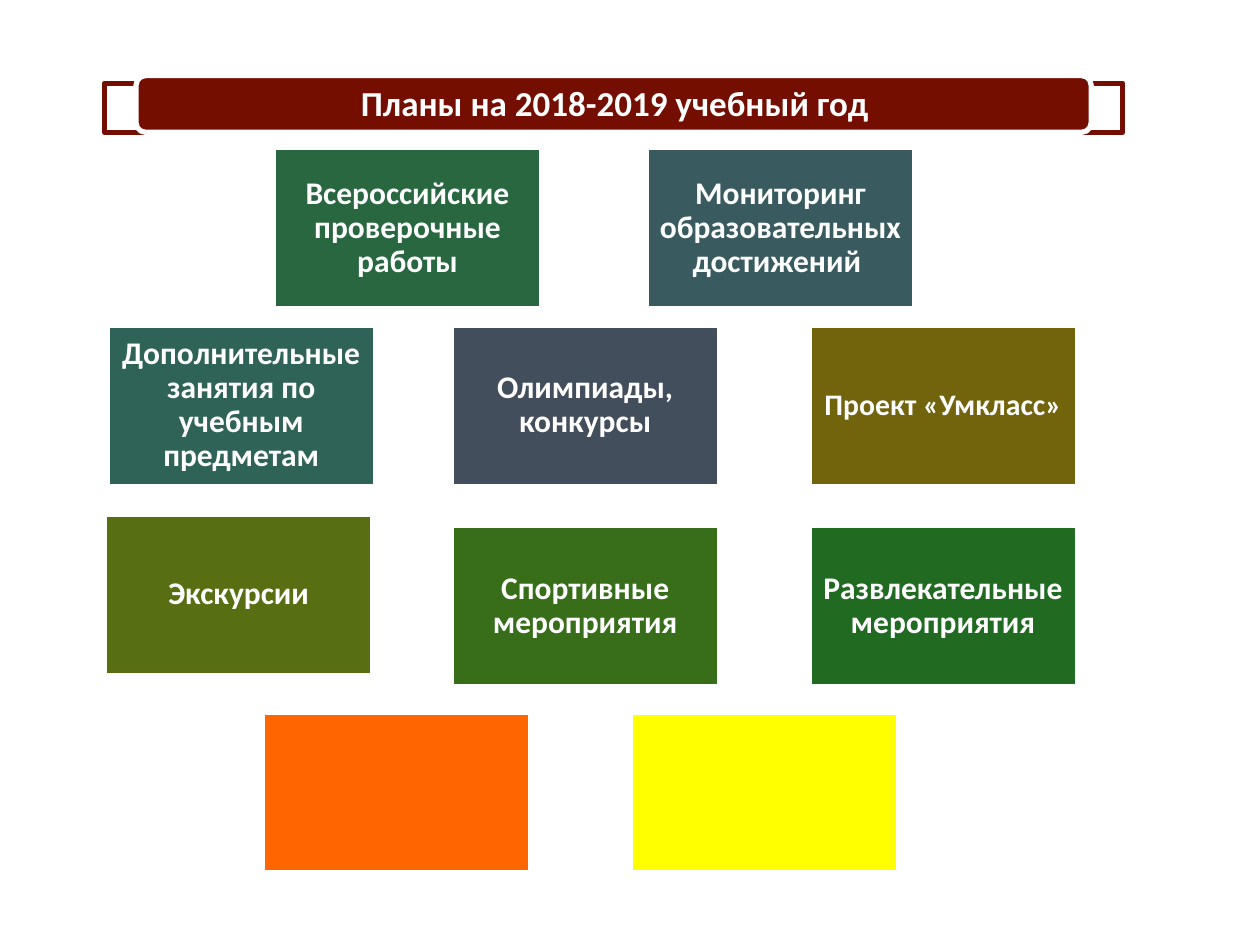
import pptx
import pptx.dml.color
import pptx.enum.shapes
import pptx.enum.text
import pptx.oxml.ns
import pptx.util
from lxml import etree

RGBColor = pptx.dml.color.RGBColor
Shape = pptx.enum.shapes.MSO_SHAPE
Inches = pptx.util.Inches

WHITE = RGBColor(0xFF, 0xFF, 0xFF)
MAROON = RGBColor(0x73, 0x0E, 0x00)
FOREST = RGBColor(0x28, 0x67, 0x40)
TEAL = RGBColor(0x39, 0x5A, 0x5F)
PINE = RGBColor(0x30, 0x63, 0x57)
SLATE = RGBColor(0x42, 0x4E, 0x5B)
BRONZE = RGBColor(0x71, 0x64, 0x0C)
OLIVE = RGBColor(0x57, 0x6F, 0x12)
LEAF = RGBColor(0x38, 0x6D, 0x19)
GREEN = RGBColor(0x20, 0x6A, 0x21)
ORANGE = RGBColor(0xFF, 0x66, 0x00)
YELLOW = RGBColor(0xFF, 0xFF, 0x00)

CARD_WIDTH, CARD_HEIGHT = 2.09, 1.24
CARD_SIZE = (2.13, 1.28)
# Each row: top, then its cards as (left, colour, text, text size)
ROWS = [
    (1.17, [(2.17, FOREST, "Всероссийские проверочные работы", 18),
            (5.13, TEAL, "Мониторинг образовательных достижений ", 18)]),
    (2.58, [(0.85, PINE, "Дополнительные занятия по учебным предметам", 18),
            (3.58, SLATE, "Олимпиады, конкурсы", 18),
            (6.42, BRONZE, "Проект «Умкласс»", 17)]),
    (4.08, [(0.83, OLIVE, "Экскурсии", 18)]),
    (4.17, [(3.58, LEAF, "Спортивные мероприятия", 18),
            (6.42, GREEN, "Развлекательные мероприятия", 18)]),
    (5.65, [(2.08, ORANGE, "", 18),
            (5.00, YELLOW, "", 18)]),
]


def write_text(shape, text, size=18, side=0.07, edge=0.07):
    """Fill the shape with one centred bold white paragraph."""
    frame = shape.text_frame
    frame.auto_size = pptx.enum.text.MSO_AUTO_SIZE.NONE
    frame.word_wrap = True
    frame.vertical_anchor = pptx.enum.text.MSO_ANCHOR.MIDDLE
    frame.margin_left = frame.margin_right = Inches(side)
    frame.margin_top = frame.margin_bottom = Inches(edge)
    para = frame.paragraphs[0]
    para.alignment = pptx.enum.text.PP_ALIGN.CENTER
    para.line_spacing = 0.9
    para.space_before = pptx.util.Pt(0)
    span = para.add_run()
    span.text = text
    span.font.name = "Calibri"
    span.font.size = pptx.util.Pt(size)
    span.font.bold = True
    span.font.color.rgb = WHITE


def add_box(page, kind, left, top, width, height, fill, line=WHITE):
    box = page.shapes.add_shape(
        kind, Inches(left), Inches(top), Inches(width), Inches(height))
    box.shadow.inherit = False
    box.fill.solid()
    box.fill.fore_color.rgb = fill
    box.line.color.rgb = line
    box.line.width = pptx.util.Pt(3)
    return box


def set_opacity(box, percent):
    colour = box.fill._xPr.find(".//" + pptx.oxml.ns.qn("a:srgbClr"))
    alpha = etree.SubElement(colour, pptx.oxml.ns.qn("a:alpha"))
    alpha.set("val", str(percent * 1000))


def add_heading(page, text):
    frame = add_box(page, Shape.RECTANGLE, 0.83, 0.66, 8.08, 0.39, WHITE, MAROON)
    set_opacity(frame, 90)
    add_box(page, Shape.ROUNDED_RECTANGLE, 1.08, 0.6, 7.58, 0.45, MAROON)
    title = page.shapes.title
    title.left, title.top = Inches(1.11), Inches(0.63)
    title.width, title.height = Inches(7.54), Inches(0.41)
    write_text(title, text, size=20, side=0.21, edge=0)
    # The title has to lie in front of its banner
    title.element.getparent().append(title.element)


def add_cards(page):
    for top, cards in ROWS:
        for left, colour, text, size in cards:
            card = add_box(page, Shape.RECTANGLE, left, top, *CARD_SIZE, colour)
            if text:
                write_text(card, text, size=size)


def main():
    deck = pptx.Presentation()
    deck.slide_width, deck.slide_height = Inches(10), Inches(7.5)
    page = deck.slides.add_slide(deck.slide_layouts.get_by_name("Title Only"))
    add_cards(page)
    add_heading(page, "Планы на 2018-2019 учебный год")
    deck.save("out.pptx")


if __name__ == "__main__":
    main()
